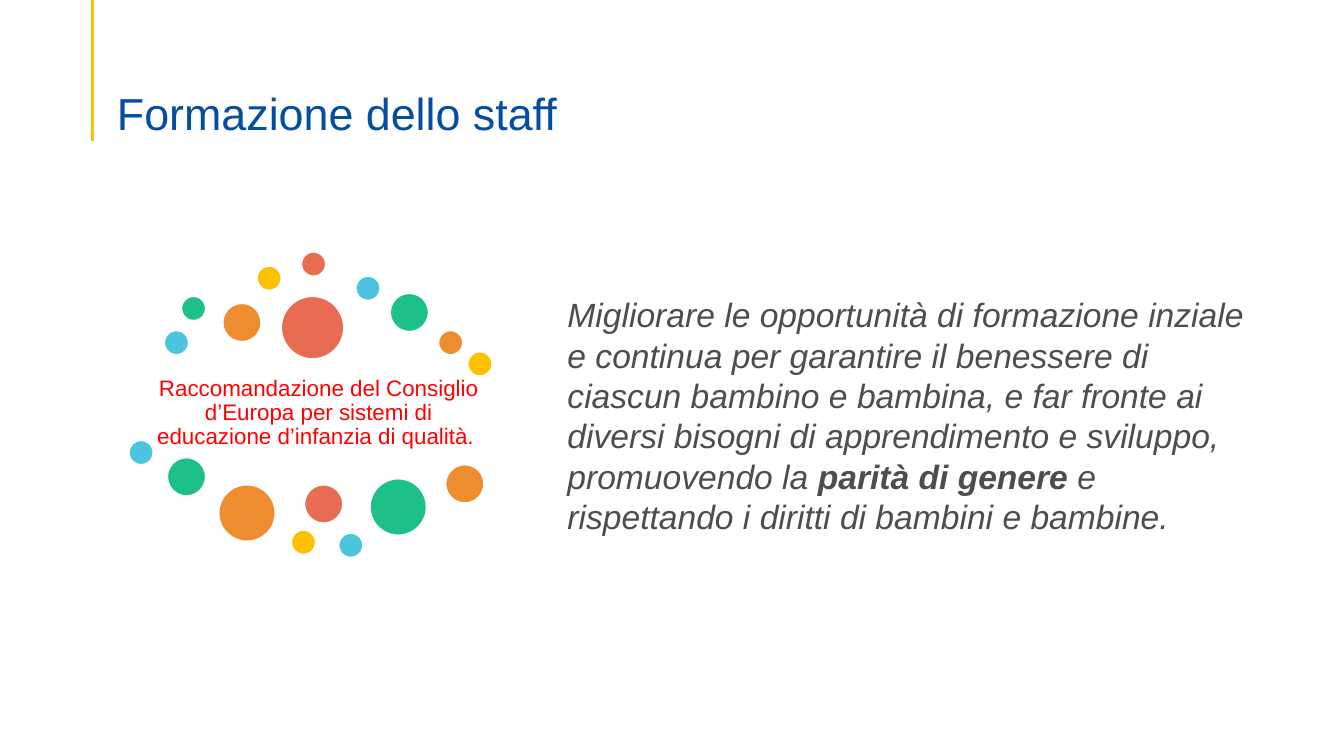
"""Build the staff training slide with its ring of coloured dots."""
from dataclasses import dataclass

from lxml import etree
from pptx import Presentation
from pptx import util as u
from pptx.dml.color import RGBColor
from pptx.enum import shapes, text
from pptx.oxml.ns import qn


@dataclass(frozen=True)
class Theme:
    font: str = "Arial"
    title: str = "034EA2"
    body: str = "4D4D4D"
    accent: str = "FF0000"
    white: str = "FFFFFF"
    yellow: str = "FFC000"
    blue: str = "4BC5DE"
    green: str = "1EC08A"
    orange: str = "ED8D2F"
    red: str = "E76C53"
    title_size: int = 32
    body_size: int = 24
    caption_size: int = 16


theme = Theme()


def style(run, size, color):
    run.font.name = theme.font
    run.font.size = u.Pt(size)
    run.font.color.rgb = RGBColor.from_string(color)


def set_frame(frame, anchor, left, top, right, bottom):
    frame.word_wrap = True
    frame.auto_size = text.MSO_AUTO_SIZE.NONE
    frame.vertical_anchor = anchor
    frame.margin_left, frame.margin_top = u.Inches(left), u.Inches(top)
    frame.margin_right, frame.margin_bottom = u.Inches(right), u.Inches(bottom)


deck = Presentation()
deck.slide_width, deck.slide_height = u.Inches(13.33), u.Inches(7.5)
slide = deck.slides.add_slide(deck.slide_layouts[5])

accent_line = slide.shapes.add_connector(
    shapes.MSO_CONNECTOR.STRAIGHT, u.Inches(0.92), 0, u.Inches(0.92), u.Inches(1.4))
accent_line.line.color.rgb = RGBColor.from_string(theme.yellow)
accent_line.line.width = u.Pt(2.25)
etree.SubElement(accent_line._element.spPr, qn("a:effectLst"))

title = slide.shapes.title
title.left, title.top = u.Inches(1.06), u.Inches(0.53)
title.width, title.height = u.Inches(11.5), u.Inches(0.86)
set_frame(title.text_frame, text.MSO_ANCHOR.BOTTOM, 0.1, 0.05, 0.1, 0)
title.text_frame.text = "Formazione dello staff"
heading = title.text_frame.paragraphs[0]
heading.alignment = text.PP_ALIGN.LEFT
heading.line_spacing = 0.9
style(heading.runs[0], theme.title_size, theme.title)

goal = slide.shapes.add_textbox(u.Inches(5.53), u.Inches(2.87), u.Inches(7.03), u.Inches(2.52))
set_frame(goal.text_frame, text.MSO_ANCHOR.TOP, 0.1, 0.05, 0.1, 0.05)
goal.text_frame.auto_size = text.MSO_AUTO_SIZE.SHAPE_TO_FIT_TEXT
for wording, bold in (
    ("Migliorare le opportunità di formazione inziale e continua per garantire il benessere "
     "di ciascun bambino e bambina, e far fronte ai diversi bisogni di apprendimento e "
     "sviluppo, promuovendo la ", False),
    ("parità di genere", True),
    (" e rispettando i diritti di bambini e bambine.", False),
):
    run = goal.text_frame.paragraphs[0].add_run()
    run.text = wording
    style(run, theme.body_size, theme.body)
    run.font.italic = True
    run.font.bold = bold

ring = slide.shapes.add_group_shape()
source = ring.shapes.add_textbox(u.Inches(1.52), u.Inches(3.64), u.Inches(3.28), u.Inches(0.92))
set_frame(source.text_frame, text.MSO_ANCHOR.MIDDLE, 0.02, 0.02, 0.02, 0.02)
source.text_frame.text = ("Raccomandazione del Consiglio d’Europa per sistemi di "
                          "educazione d’infanzia di qualità. ")
caption = source.text_frame.paragraphs[0]
caption.alignment = text.PP_ALIGN.CENTER
caption.line_spacing = 0.9
style(caption.runs[0], theme.caption_size, theme.accent)

small, medium, large, largest = 0.24, 0.38, 0.56, 0.62
dots = (
    (1.63, 3.28, small, theme.blue),
    (1.8, 2.94, small, theme.green),
    (2.21, 3.01, medium, theme.orange),
    (2.55, 2.64, small, theme.yellow),
    (2.99, 2.5, small, theme.red),
    (3.53, 2.74, small, theme.blue),
    (3.87, 2.91, medium, theme.green),
    (4.35, 3.28, small, theme.orange),
    (4.64, 3.49, small, theme.yellow),
    (2.79, 2.94, largest, theme.red),
    (1.28, 4.37, small, theme.blue),
    (1.66, 4.54, medium, theme.green),
    (2.17, 4.81, large, theme.orange),
    (2.89, 5.26, small, theme.yellow),
    (3.02, 4.81, medium, theme.red),
    (3.36, 5.29, small, theme.blue),
    (3.67, 4.75, large, theme.green),
    (4.42, 4.61, medium, theme.orange),
)
for left, top, diameter, color in dots:
    dot = ring.shapes.add_shape(
        shapes.MSO_SHAPE.OVAL, u.Inches(left), u.Inches(top),
        u.Inches(diameter), u.Inches(diameter))
    dot.shadow.inherit = False
    dot.fill.solid()
    dot.fill.fore_color.rgb = RGBColor.from_string(color)
    dot.line.color.rgb = RGBColor.from_string(theme.white)
    dot.line.width = u.Pt(1)

deck.save("out.pptx")
